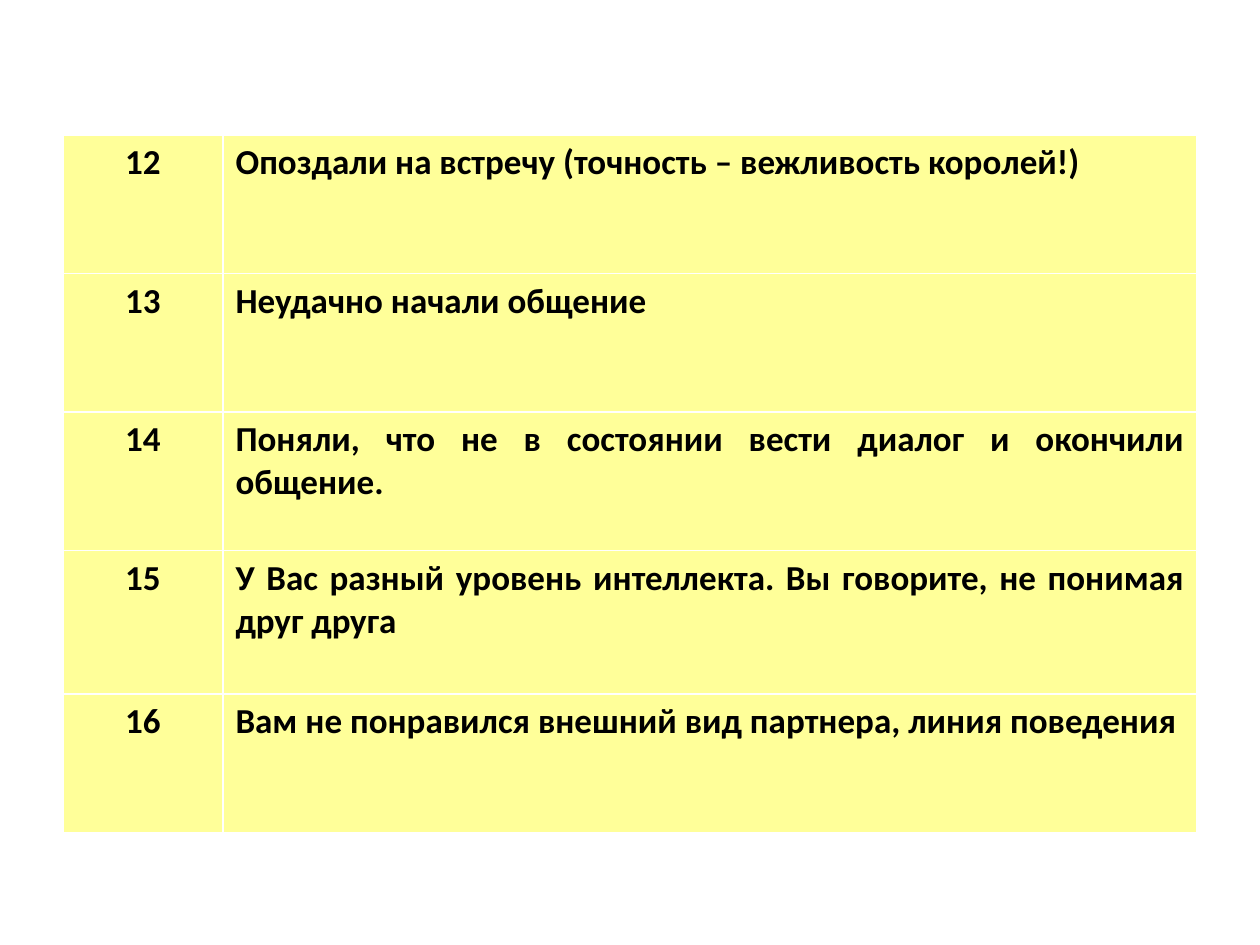
import pptx
import pptx.util
import pptx.dml.color
import pptx.enum.text
from pptx.util import Inches

YELLOW = pptx.dml.color.RGBColor(0xFF, 0xFF, 0x99)
BLACK = pptx.dml.color.RGBColor(0x00, 0x00, 0x00)

FIRST_NUMBER = 12
REASONS = [
    "Опоздали на встречу (точность – вежливость королей!) ",
    "Неудачно начали общение ",
    "Поняли, что не в состоянии вести диалог и окончили общение.",
    "У Вас разный уровень интеллекта. Вы говорите, не понимая друг друга",
    "Вам не понравился внешний вид партнера, линия поведения",
]
ROW_HEIGHTS = [1.1, 1.1, 1.1, 1.14, 1.1]
NUMBER_WIDTH = Inches(1.27)


def format_cell(cell, text, alignment):
    cell.fill.solid()
    cell.fill.fore_color.rgb = YELLOW
    cell.text_frame.text = text
    paragraph = cell.text_frame.paragraphs[0]
    paragraph.alignment = alignment
    font = paragraph.runs[0].font
    font.name = "Calibri"
    font.size = pptx.util.Pt(20)
    font.bold = True
    font.color.rgb = BLACK


def add_reasons_table(slide, left, top, width, height):
    shape = slide.shapes.add_table(len(REASONS), 2, left, top, width, height)
    table = shape.table
    table.horz_banding = False
    table.columns[0].width = NUMBER_WIDTH
    table.columns[1].width = width - NUMBER_WIDTH
    alignments = pptx.enum.text.PP_ALIGN
    for index, (reason, row_height) in enumerate(zip(REASONS, ROW_HEIGHTS)):
        table.rows[index].height = Inches(row_height)
        format_cell(table.cell(index, 0), str(FIRST_NUMBER + index), alignments.CENTER)
        format_cell(table.cell(index, 1), reason, alignments.JUSTIFY)


def main():
    presentation = pptx.Presentation()
    presentation.slide_width = Inches(10)
    presentation.slide_height = Inches(7.5)
    slide = presentation.slides.add_slide(presentation.slide_layouts[6])
    add_reasons_table(slide, Inches(0.5), Inches(1.07), Inches(9), Inches(sum(ROW_HEIGHTS)))
    presentation.save("out.pptx")


if __name__ == "__main__":
    main()
